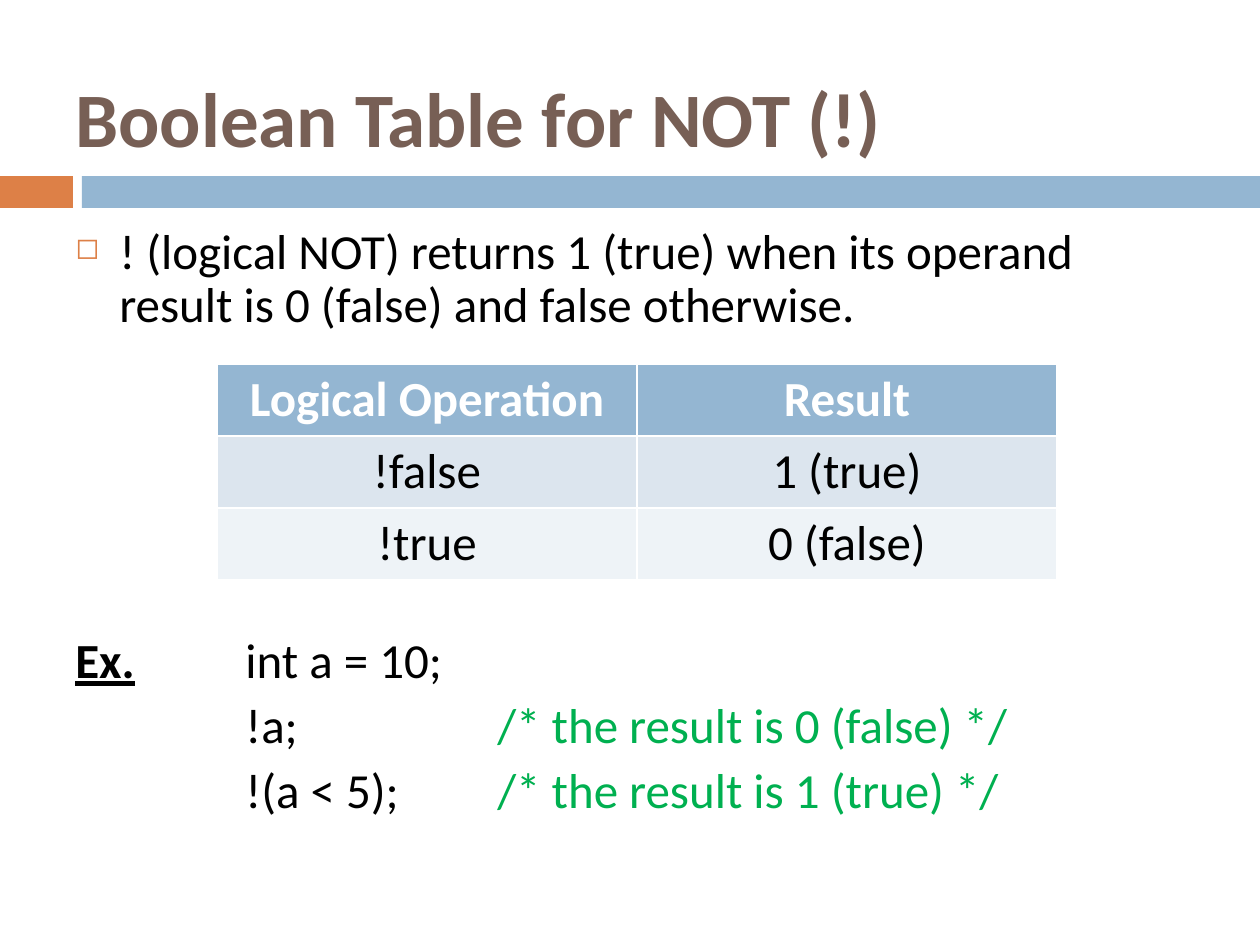
"""Build a slide explaining the Boolean table for the NOT operator."""
from lxml.etree import SubElement
from pptx import Presentation
from pptx.dml.color import RGBColor
from pptx.enum.shapes import MSO_SHAPE
from pptx.enum.text import MSO_ANCHOR as ANCHOR, PP_ALIGN as ALIGN
from pptx.oxml.ns import qn
from pptx.util import Emu, Pt

ORANGE = RGBColor(0xDD, 0x80, 0x47)
BLUE = RGBColor(0x94, 0xB6, 0xD2)
BROWN = RGBColor(0x77, 0x5F, 0x55)
GREEN = RGBColor(0x00, 0xB0, 0x50)
BLACK = RGBColor(0x00, 0x00, 0x00)
WHITE = RGBColor(0xFF, 0xFF, 0xFF)
ROW_FILLS = [BLUE, RGBColor(0xDC, 0xE5, 0xEE), RGBColor(0xEE, 0xF3, 0xF7)]


def px(*lengths):
    return [Emu(round(length * 914400 / 126)) for length in lengths]


def style(paragraph, size, color, bold=False):
    font = paragraph.font
    font.name, font.size, font.bold = "Calibri", Pt(size), bold
    font.color.rgb = color


prs = Presentation()
prs.slide_width, prs.slide_height = px(1260, 945)
slide = prs.slides.add_slide(prs.slide_layouts[6])
shapes = slide.shapes

for left, width, color in [(0, 73, ORANGE), (82, 1178, BLUE)]:
    band = shapes.add_shape(MSO_SHAPE.RECTANGLE, *px(left, 176, width, 32))
    band.shadow.inherit = False
    band.fill.solid()
    band.fill.fore_color.rgb = color
    band.line.fill.background()

title = shapes.add_textbox(*px(63, 38, 1134, 157)).text_frame
title.word_wrap = True
title.vertical_anchor = ANCHOR.MIDDLE
title.text = "Boolean Table for NOT (!)"
style(title.paragraphs[0], 44, BROWN, True)

definition = shapes.add_textbox(*px(63, 221, 1133, 120)).text_frame
definition.word_wrap = True
definition.text = (
    "! (logical NOT) returns 1 (true) when its operand "
    "result is 0 (false) and false otherwise."
)
rule = definition.paragraphs[0]
style(rule, 28, BLACK)
rule.line_spacing = 0.9
rule_props = rule._p.get_or_add_pPr()
indent, = px(44)
rule_props.set("marL", str(indent))
rule_props.set("indent", str(-indent))
bullet_color = SubElement(rule_props, qn("a:buClr"))
SubElement(bullet_color, qn("a:srgbClr"), val=str(ORANGE))
SubElement(rule_props, qn("a:buSzPct"), val="60000")
SubElement(rule_props, qn("a:buChar"), char="◻")

truth_rows = [
    ("Logical Operation", "Result"),
    ("!false", "1 (true)"),
    ("!true", "0 (false)"),
]
truth_table = shapes.add_table(3, 2, *px(217, 364, 840, 216)).table
for row, (texts, fill) in enumerate(zip(truth_rows, ROW_FILLS)):
    for column, text in enumerate(texts):
        cell = truth_table.cell(row, column)
        cell.text = text
        cell.fill.solid()
        cell.fill.fore_color.rgb = fill
        entry = cell.text_frame.paragraphs[0]
        entry.alignment = ALIGN.CENTER
        style(entry, 28, BLACK if row else WHITE, row == 0)

example_lines = [
    ("Ex.", "int a = 10;", ""),
    ("", "!a;", "/* the result is 0 (false) */"),
    ("", "!(a < 5);", "/* the result is 1 (true) */"),
]
example = shapes.add_textbox(*px(63, 630, 1133, 210)).text_frame
example.word_wrap = True
for number, (label, code, comment) in enumerate(example_lines):
    line = example.add_paragraph() if number else example.paragraphs[0]
    style(line, 28, BLACK)
    line.line_spacing = 0.9
    line.space_before = Pt(7 if number else 0)
    tabs = SubElement(line._p.get_or_add_pPr(), qn("a:tabLst"))
    for stop in px(170, 422):
        SubElement(tabs, qn("a:tab"), pos=str(stop), algn="l")
    line._p.pPr.insert(2, tabs)
    if label:
        heading = line.add_run()
        heading.text = label
        heading.font.bold = heading.font.underline = True
    line.add_run().text = "\t" + code
    if comment:
        remark = line.add_run()
        remark.text = "\t" + comment
        remark.font.color.rgb = GREEN

prs.save("out.pptx")
